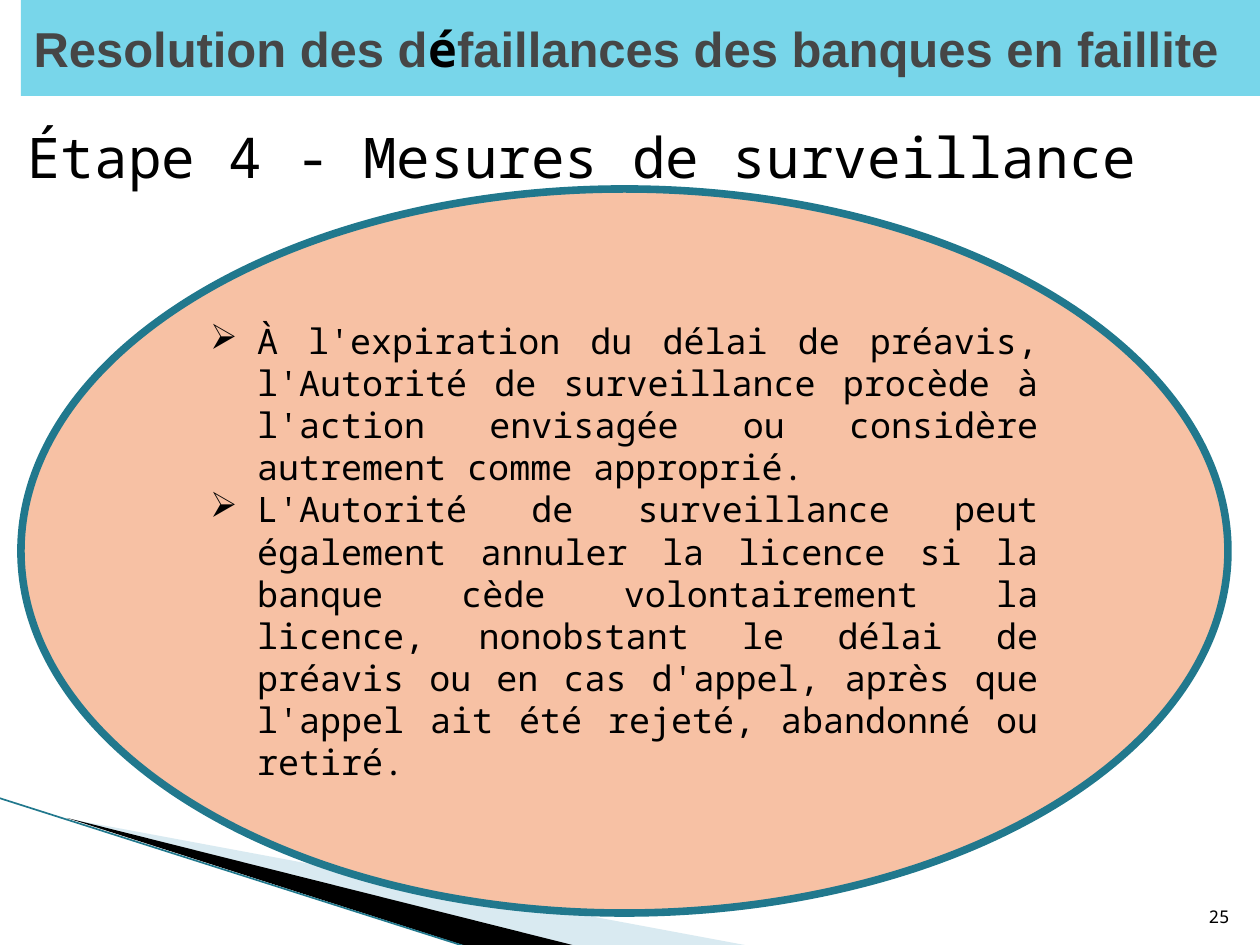
from lxml import etree
from pptx import Presentation
from pptx.dml.color import RGBColor
from pptx.enum.shapes import MSO_CONNECTOR, MSO_SHAPE
from pptx.enum.text import MSO_ANCHOR, PP_ALIGN
from pptx.oxml.ns import qn
from pptx.util import Emu, Pt

LEFT, RIGHT, JUSTIFY = PP_ALIGN.LEFT, PP_ALIGN.RIGHT, PP_ALIGN.JUSTIFY
TOP, MIDDLE, BOTTOM = MSO_ANCHOR.TOP, MSO_ANCHOR.MIDDLE, MSO_ANCHOR.BOTTOM
OVAL, STRAIGHT = MSO_SHAPE.OVAL, MSO_CONNECTOR.STRAIGHT
SCALE = 914400 / 126
SANS, MONO = "Arial", "Noto Sans Mono"
BLACK, GREY, TEAL = "000000", "464646", "21788D"
AQUA, PEACH, PALE_BLUE = "78D6EA", "F7C1A4", "A0CBDC"

TITLE = [
    ("Resolution des d", SANS, GREY),
    ("é", MONO, BLACK),
    ("faillances des banques en faillite", SANS, GREY),
]
MEASURES = [
    "À l'expiration du délai de préavis, l'Autorité de surveillance procède à "
    "l'action envisagée ou considère autrement comme approprié.",
    "L'Autorité de surveillance peut également annuler la licence si la banque "
    "cède volontairement la licence, nonobstant le délai de préavis ou en cas "
    "d'appel, après que l'appel ait été rejeté, abandonné ou retiré.",
]


def px(value):
    return Emu(round(value * SCALE))


def color(value):
    return RGBColor.from_string(value)


class SlideBuilder:
    """Draws styled elements on the current slide."""

    def __init__(self, slide):
        self.slide = slide

    def fill(self, shape, fill, alpha=None):
        shape.fill.solid()
        shape.fill.fore_color.rgb = color(fill)
        if alpha:
            tone = shape.fill._xPr.find(qn("a:solidFill"))[0]
            etree.SubElement(tone, qn("a:alpha"), val=str(alpha * 1000))

    def font(self, font, name, size, tone, bold=False):
        font.name, font.size, font.bold = name, Pt(size), bold
        font.color.rgb = color(tone)

    def title(self, spans, left, top, width, height):
        box = self.slide.shapes.title
        box.left, box.top, box.width, box.height = map(px, (left, top, width, height))
        self.fill(box, AQUA)
        box.text_frame.vertical_anchor = MIDDLE
        para = box.text_frame.paragraphs[0]
        para.alignment = LEFT
        for text, name, tone in spans:
            span = para.add_run()
            span.text = text
            self.font(span.font, name, 28, tone, bold=True)

    def text(self, text, left, top, width, height, size, align=LEFT, anchor=TOP, indent=0):
        box = self.slide.shapes.add_textbox(*map(px, (left, top, width, height)))
        frame = box.text_frame
        frame.word_wrap, frame.vertical_anchor = True, anchor
        frame.text = text
        para = frame.paragraphs[0]
        para.alignment = align
        para._p.get_or_add_pPr().set("marL", str(px(indent)))
        self.font(para.runs[0].font, MONO, size, BLACK)

    def polygon(self, points, fill, alpha=None):
        builder = self.slide.shapes.build_freeform(*points[0], scale=SCALE)
        builder.add_line_segments(points[1:], close=True)
        shape = builder.convert_to_shape()
        shape.shadow.inherit = False
        self.fill(shape, fill, alpha)
        shape.line.fill.background()

    def line(self, start, end, tone, width):
        line = self.slide.shapes.add_connector(STRAIGHT, *map(px, start + end))
        line.line.color.rgb, line.line.width = color(tone), Pt(width)
        etree.SubElement(line._element.spPr, qn("a:effectLst"))

    def bullet_oval(self, items, left, top, width, height):
        oval = self.slide.shapes.add_shape(OVAL, *map(px, (left, top, width, height)))
        oval.shadow.inherit = False
        self.fill(oval, PEACH)
        oval.line.color.rgb, oval.line.width = color(TEAL), Pt(4.33)
        frame = oval.text_frame
        frame.word_wrap, frame.vertical_anchor = True, MIDDLE
        frame.text = "\n".join(items)
        for para in frame.paragraphs:
            para.alignment = JUSTIFY
            properties = para._p.get_or_add_pPr()
            properties.set("marL", str(px(47)))
            properties.set("indent", str(px(-47)))
            etree.SubElement(properties, qn("a:buChar"), char="➢")
            self.font(para.runs[0].font, MONO, 20, BLACK)


def main():
    deck = Presentation()
    deck.slide_width, deck.slide_height = px(1260), px(945)
    page = SlideBuilder(deck.slides.add_slide(deck.slide_layouts[5]))
    page.polygon([(69, 819), (750, 946), (575, 946)], PALE_BLUE, alpha=40)
    page.polygon([(67, 818), (576, 946), (469, 947)], BLACK)
    page.line((-1, 798), (467, 947), TEAL, 0.95)
    page.text("Étape 4 - Mesures de surveillance", 0, 116, 1260, 756, 32, indent=15)
    page.text("25", 1192, 883, 50, 50, 10, align=RIGHT, anchor=BOTTOM)
    page.title(TITLE, 21, 0, 1260, 96)
    page.bullet_oval(MEASURES, 21, 189, 1207, 724)
    deck.save("out.pptx")


if __name__ == "__main__":
    main()
